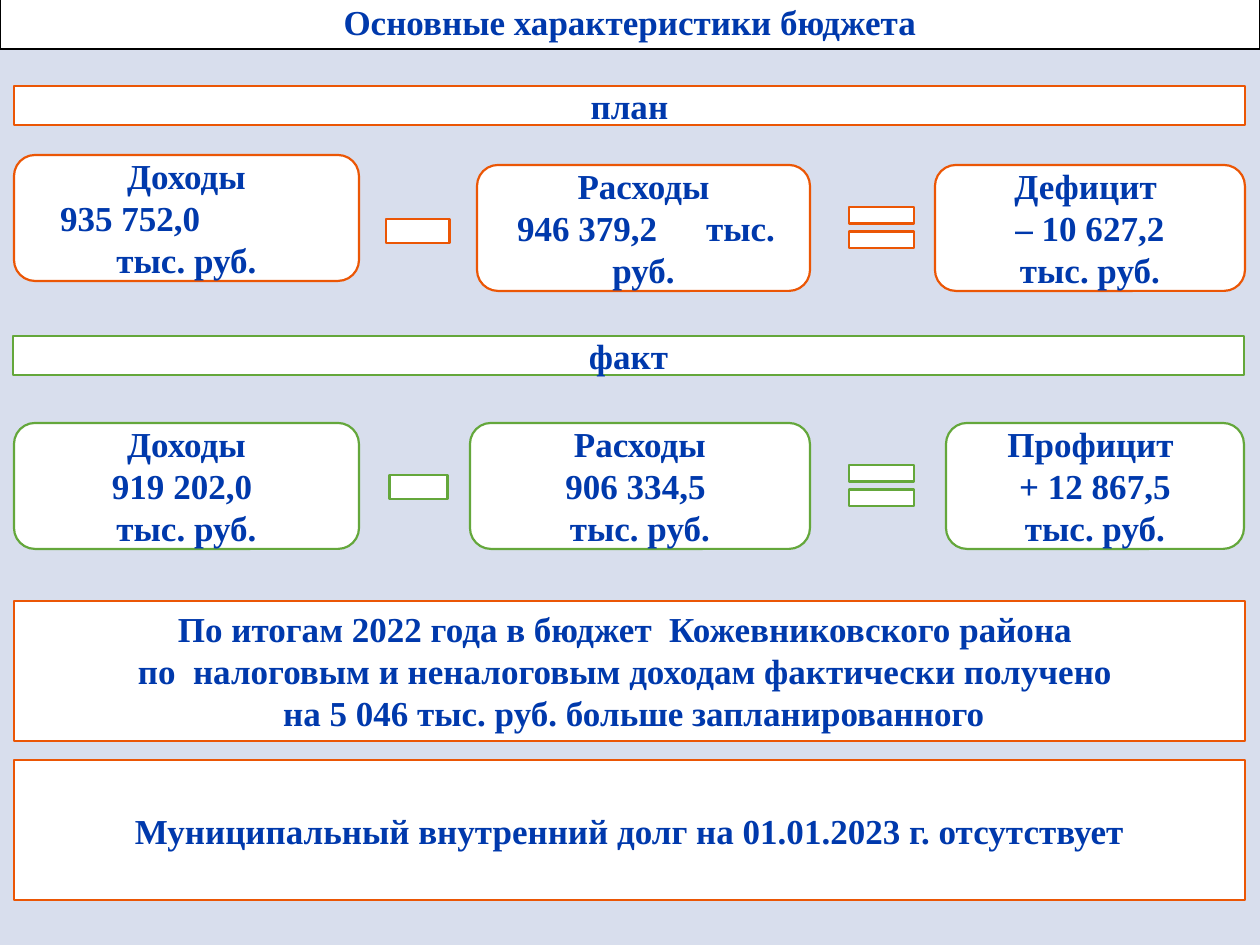
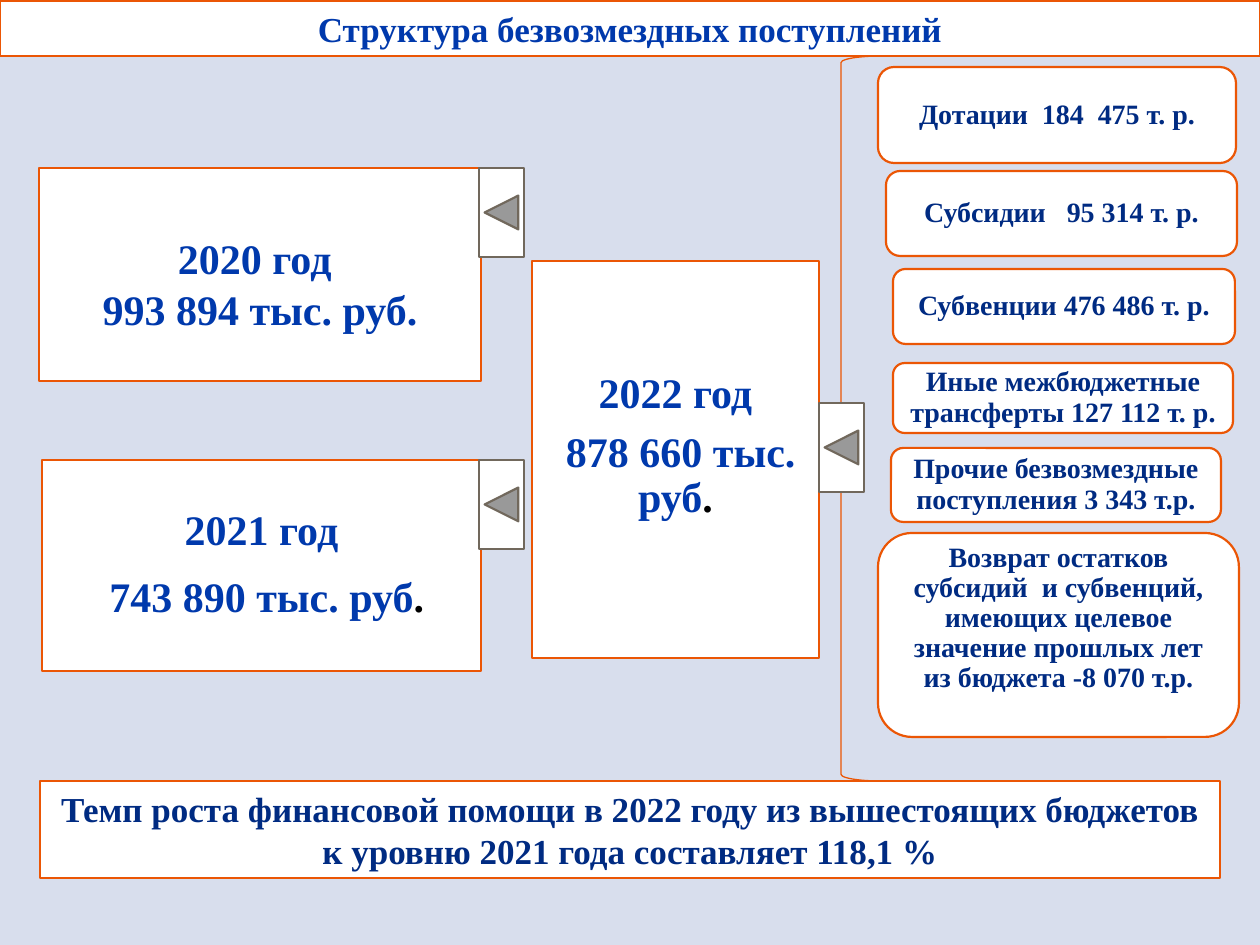
"""Builds two slides on the execution of a district budget."""
from dataclasses import dataclass

from lxml import etree
from pptx import Presentation
from pptx.dml.color import RGBColor
from pptx.enum.shapes import MSO_SHAPE
from pptx.enum.text import MSO_ANCHOR, MSO_AUTO_SIZE, PP_ALIGN
from pptx.oxml.ns import qn
from pptx.util import Emu, Pt

RECT = MSO_SHAPE.RECTANGLE
ROUNDED = MSO_SHAPE.ROUNDED_RECTANGLE
MINUS = MSO_SHAPE.MATH_MINUS
EQUAL = MSO_SHAPE.MATH_EQUAL
BRACE = MSO_SHAPE.LEFT_BRACE
BACK_BUTTON = MSO_SHAPE.ACTION_BUTTON_BACK_OR_PREVIOUS
TOP, MIDDLE = MSO_ANCHOR.TOP, MSO_ANCHOR.MIDDLE
CENTER, LEFT = PP_ALIGN.CENTER, PP_ALIGN.LEFT

BACKGROUND = RGBColor(0xD8, 0xDE, 0xED)
WHITE = RGBColor(0xFF, 0xFF, 0xFF)
BLACK = RGBColor(0, 0, 0)
ORANGE = RGBColor(0xEB, 0x56, 0x05)
GREEN = RGBColor(0x64, 0xA7, 0x3B)
TAUPE = RGBColor(0x71, 0x68, 0x5C)
BLUE = RGBColor(0x00, 0x39, 0xAC)
NAVY = RGBColor(0x00, 0x2B, 0x82)

FONT = "Times New Roman"
EMU_PER_PX = 914400 / 126
TITLE_ONLY = 5
INSETS = (13, 6, 13, 6)
TIGHT_INSETS = (9, 4, 9, 4)


@dataclass
class Line:
    """One paragraph, with an optional black ending, indent and tab stop."""
    text: str
    ending: str = ""
    indent: int = 0
    tab: int = 0


PLAN = [
    ((14, 155, 345, 126),
     ["Доходы", Line("935 752,0", indent=27), "тыс. руб."]),
    ((477, 165, 333, 126),
     ["Расходы", Line("946 379,2\tтыс.", indent=21, tab=205), "руб."]),
    ((935, 165, 310, 126), ["Дефицит ", "– 10 627,2", "тыс. руб."]),
]
FACT = [
    ((14, 423, 345, 126), ["Доходы", "919 202,0 ", "тыс. руб."]),
    ((470, 423, 340, 126), ["Расходы", "906 334,5 ", "тыс. руб."]),
    ((946, 423, 298, 126), ["Профицит ", "+ 12 867,5", "тыс. руб."]),
]
GRANTS = [
    ((878, 67, 358, 96), "Дотации  184  475 т. р."),
    ((886, 171, 351, 85), "Субсидии   95 314 т. р."),
    ((893, 269, 342, 75), "Субвенции 476 486 т. р."),
    ((893, 363, 340, 70), "Иные межбюджетные трансферты 127 112 т. р."),
    ((891, 448, 330, 74), "Прочие безвозмездные поступления 3 343 т.р."),
]
REFUND = ("Возврат остатков субсидий  и субвенций, имеющих целевое "
          "значение прошлых лет из бюджета -8 070 т.р.")


def px(length):
    """Turn pixels into EMU."""
    return Emu(round(length * EMU_PER_PX))


def apply(target, values):
    """Set each named attribute of the target."""
    for name, value in values.items():
        setattr(target, name, value)


def write_run(paragraph, text, size, color):
    """Add a bold run to a paragraph."""
    run = paragraph.add_run()
    run.text = text
    apply(run.font, {"name": FONT, "size": Pt(size), "bold": True})
    run.font.color.rgb = color


def indent_paragraph(paragraph, line):
    """Left-align a paragraph at its indent and set its tab stop."""
    paragraph.alignment = LEFT
    properties = paragraph._p.get_or_add_pPr()
    properties.set("marL", str(px(line.indent)))
    properties.set("indent", "0")
    if line.tab:
        stops = etree.SubElement(properties, qn("a:tabLst"))
        etree.SubElement(stops, qn("a:tab"), pos=str(px(line.tab)), algn="l")


def write_text(frame, lines, size=20, color=BLUE, spacing=1.0, after=0,
               anchor=MIDDLE, insets=INSETS):
    """Fill a text frame with centred bold paragraphs."""
    left, top, right, bottom = map(px, insets)
    apply(frame, {"word_wrap": True, "auto_size": MSO_AUTO_SIZE.NONE,
                  "vertical_anchor": anchor, "margin_left": left,
                  "margin_top": top, "margin_right": right,
                  "margin_bottom": bottom})
    for index, item in enumerate(lines):
        line = item if isinstance(item, Line) else Line(item)
        paragraph = frame.add_paragraph() if index else frame.paragraphs[0]
        apply(paragraph, {"alignment": CENTER, "line_spacing": spacing,
                          "space_before": Pt(0), "space_after": Pt(after)})
        if line.indent:
            indent_paragraph(paragraph, line)
        write_run(paragraph, line.text, size, color)
        if line.ending:
            write_run(paragraph, line.ending, size, BLACK)


def outline(shape, color, width=1.25):
    """Give a shape its border."""
    shape.line.color.rgb = color
    shape.line.width = Pt(width)


def add_figure(slide, kind, bounds, border=ORANGE):
    """Add a white outlined shape."""
    figure = slide.shapes.add_shape(kind, *map(px, bounds))
    figure.shadow.inherit = False
    figure.fill.solid()
    figure.fill.fore_color.rgb = WHITE
    outline(figure, border)
    return figure


def add_panel(slide, bounds, lines, kind=RECT, border=ORANGE, **text_format):
    """Add a white outlined shape with text."""
    panel = add_figure(slide, kind, bounds, border)
    write_text(panel.text_frame, lines, **text_format)


def add_titled_slide(deck, heading, bounds, border):
    """Add a slide with the shared background and title band."""
    slide = deck.slides.add_slide(deck.slide_layouts[TITLE_ONLY])
    slide.background.fill.solid()
    slide.background.fill.fore_color.rgb = BACKGROUND
    title = slide.shapes.title
    apply(title, dict(zip(("left", "top", "width", "height"),
                          map(px, bounds))))
    title.fill.solid()
    title.fill.fore_color.rgb = WHITE
    outline(title, border)
    write_text(title.text_frame, [heading])
    return slide


def add_equation(slide, caption, caption_bounds, cards, minus, equal, border):
    """Add a captioned row: income minus spending equals balance."""
    add_panel(slide, caption_bounds, [caption], border=border)
    for bounds, lines in cards:
        add_panel(slide, bounds, lines, ROUNDED, border)
    add_figure(slide, MINUS, minus, border)
    add_figure(slide, EQUAL, equal, border)


def add_budget_slide(deck):
    """Build the slide comparing the planned and actual budget."""
    slide = add_titled_slide(deck, "Основные характеристики бюджета",
                             (0, -6, 1260, 55), BLACK)
    add_equation(slide, "план", (14, 86, 1231, 39), PLAN,
                 (375, 181, 86, 100), (837, 193, 89, 69), ORANGE)
    add_equation(slide, "факт", (13, 336, 1231, 39), FACT,
                 (379, 437, 79, 100), (837, 451, 89, 69), GREEN)
    add_panel(slide, (14, 601, 1231, 140), [
        "По итогам 2022 года в бюджет  Кожевниковского района ",
        "по  налоговым и неналоговым доходам фактически получено ",
        " на 5 046 тыс. руб. больше запланированного"])
    add_panel(slide, (14, 760, 1231, 140), [
        "Муниципальный внутренний долг на 01.01.2023 г. отсутствует"])


def add_transfers_slide(deck):
    """Build the slide on the structure of transfers received."""
    slide = add_titled_slide(deck, "Структура безвозмездных поступлений",
                             (0, 1, 1260, 55), ORANGE)
    grant_format = {"kind": ROUNDED, "size": 16, "color": NAVY,
                    "spacing": 0.9}
    for bounds, grant in GRANTS:
        add_panel(slide, bounds, [grant], insets=TIGHT_INSETS, **grant_format)
    add_panel(slide, (878, 533, 361, 204), [REFUND], anchor=TOP,
              insets=(9, 0, 9, 4), **grant_format)
    add_panel(slide, (40, 781, 1180, 97), [
        "Темп роста финансовой помощи в 2022 году из вышестоящих бюджетов "
        "к уровню 2021 года составляет 118,1 %"], color=NAVY)

    brace = add_figure(slide, BRACE, (801, 56, 80, 725))
    brace.fill.background()
    outline(brace, ORANGE, 0.75)

    add_panel(slide, (42, 460, 439, 211),
              ["2021 год", Line(" 743 890 тыс. руб", ".")],
              size=24, spacing=0.9, after=12, insets=(9, 9, 9, 9))
    add_panel(slide, (39, 168, 442, 213), ["2020 год ", "993 894 тыс. руб."],
              size=24, anchor=TOP, insets=(13, 65, 13, 6))
    add_panel(slide, (532, 261, 287, 397),
              ["2022 год", Line(" 878 660 тыс. руб", ".")],
              size=24, spacing=0.9, after=8, insets=(13, 6, 13, 31))
    for left, top in ((479, 168), (479, 460), (819, 403)):
        add_figure(slide, BACK_BUTTON, (left, top, 45, 89), TAUPE)


def main():
    """Create and save the presentation."""
    deck = Presentation()
    deck.slide_width, deck.slide_height = px(1260), px(945)
    add_budget_slide(deck)
    add_transfers_slide(deck)
    deck.save("out.pptx")


if __name__ == "__main__":
    main()
